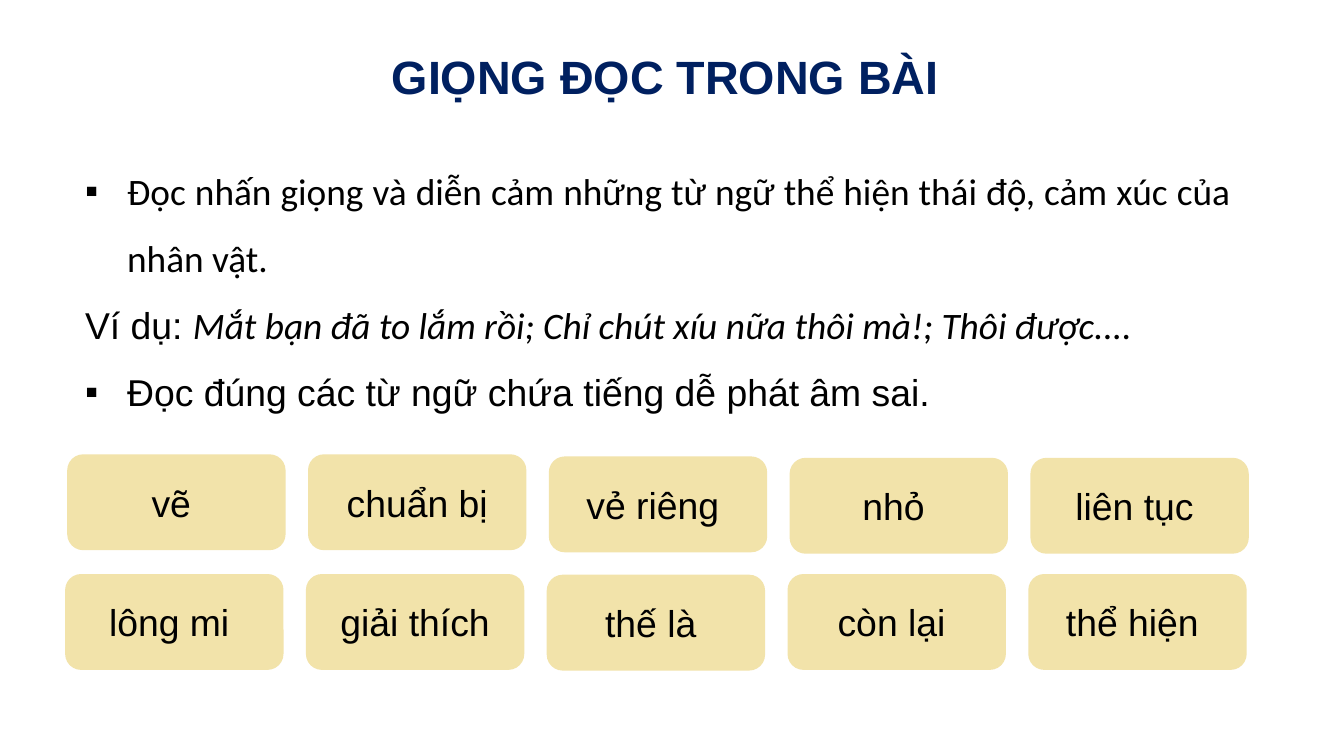
from lxml.etree import SubElement
from pptx import Presentation
from pptx.dml.color import RGBColor
from pptx.enum.shapes import MSO_SHAPE as Shape
from pptx.enum.text import MSO_ANCHOR as Anchor, MSO_AUTO_SIZE as Fit, PP_ALIGN as Align
from pptx.oxml.ns import qn
from pptx.util import Pt

PX = 9525
NAVY = RGBColor(0x00, 0x20, 0x60)
BLACK = RGBColor(0x00, 0x00, 0x00)
SAND = RGBColor(0xF2, 0xE3, 0xAA)

INDENT = 60
CARD_W, CARD_H, STEP = 312, 137, 344
# Each row: left edge, then the top and word of each card
ROWS = [
    (96, [(649, "vẽ "), (649, "chuẩn bị"), (652, "vẻ riêng "),
          (654, "nhỏ "), (654, "liên tục ")]),
    (93, [(820, "lông mi "), (820, "giải thích"), (821, "thế là "),
          (820, "còn lại "), (820, "thể hiện ")]),
]
# Each line: bulleted or not, then its runs as text, font, italic
LINES = [
    (True, [("Đọc nhấn giọng và diễn cảm những từ ngữ thể hiện thái độ, "
             "cảm xúc của nhân vật. ", "Calibri", False)]),
    (False, [("Ví dụ: ", "Arial", False),
             ("Mắt bạn đã to lắm rồi; Chỉ chút xíu nữa thôi mà!; "
              "Thôi được.... ", "Calibri", True)]),
    (True, [("Đọc đúng các từ ngữ chứa tiếng dễ phát âm sai.", "Arial", False)]),
]


def place(shape, left, top, width, height):
    shape.left, shape.top = left * PX, top * PX
    shape.width, shape.height = width * PX, height * PX


def style(run, size, color, name="Arial", bold=False, italic=False):
    font = run.font
    font.name, font.size = name, Pt(size)
    font.bold, font.italic = bold, italic
    font.color.rgb = color


def set_bullet(para, shown):
    """Give the paragraph a hanging square bullet, or none and no indent."""
    props = para._p.get_or_add_pPr()
    gap = INDENT * PX if shown else 0
    props.set("marL", str(gap))
    props.set("indent", str(-gap))
    if shown:
        SubElement(props, qn("a:buFont")).set("typeface", "Arial")
        SubElement(props, qn("a:buChar")).set("char", "▪")
    else:
        SubElement(props, qn("a:buNone"))


def add_title(slide):
    title = slide.shapes.title
    place(title, 436, 64, 1048, 90)
    frame = title.text_frame
    frame.text = "GIỌNG ĐỌC TRONG BÀI "
    frame.auto_size = Fit.NONE
    frame.vertical_anchor = Anchor.TOP
    para = frame.paragraphs[0]
    para.alignment = Align.CENTER
    style(para.runs[0], 50, NAVY, bold=True)


def add_list(slide):
    body = slide.placeholders[1]
    place(body, 112, 203, 1656, 386)
    frame = body.text_frame
    frame.auto_size = Fit.NONE
    frame.vertical_anchor = Anchor.TOP
    frame.text = "\n".join("" for _ in LINES)
    for para, (shown, parts) in zip(frame.paragraphs, LINES):
        para.alignment = Align.JUSTIFY
        para.line_spacing = 1.5
        para.space_before = Pt(0)
        set_bullet(para, shown)
        for text, name, italic in parts:
            run = para.add_run()
            run.text = text
            style(run, 40, BLACK, name, italic=italic)


def add_card(slide, left, top, word):
    box = (n * PX for n in (left, top, CARD_W, CARD_H))
    card = slide.shapes.add_shape(Shape.ROUNDED_RECTANGLE, *box)
    card.shadow.inherit = False
    card.fill.solid()
    card.fill.fore_color.rgb = SAND
    card.line.fill.background()
    frame = card.text_frame
    frame.text = word
    frame.vertical_anchor = Anchor.MIDDLE
    para = frame.paragraphs[0]
    para.alignment = Align.CENTER
    style(para.runs[0], 40, BLACK)


def main():
    deck = Presentation()
    deck.slide_width, deck.slide_height = 1920 * PX, 1080 * PX
    slide = deck.slides.add_slide(deck.slide_layouts[1])
    add_title(slide)
    add_list(slide)
    for left, cards in ROWS:
        for col, (top, word) in enumerate(cards):
            add_card(slide, left + col * STEP, top, word)
    deck.save("out.pptx")


if __name__ == "__main__":
    main()
